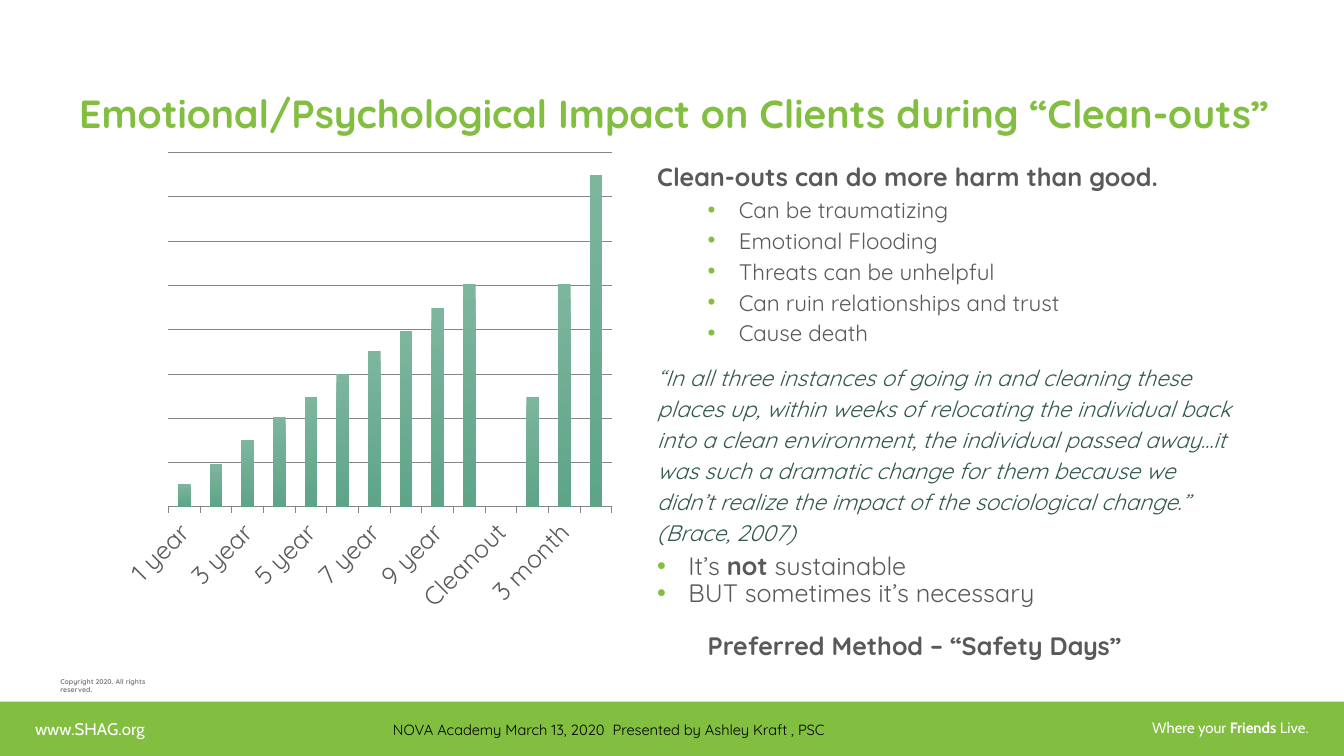
import pptx
import pptx.util
import pptx.chart.data
import pptx.dml.color
import pptx.enum.chart
import pptx.enum.shapes
import pptx.enum.text
import pptx.oxml
from pptx.oxml.ns import qn
from lxml import etree

Inches, Pt = pptx.util.Inches, pptx.util.Pt
ALIGN = pptx.enum.text.PP_ALIGN

COLORS = {"green": "82BE40", "text": "595959", "quote": "325949", "grid": "858585",
          "bar_top": "7DB59D", "bar_bottom": "5EA588", "copyright": "7F7F7F",
          "white": "FFFFFF", "black": "000000"}
FONT, FOOTER_FONT = "Quicksand", "Cabin"

TITLE = "Emotional/Psychological Impact on Clients during “Clean-outs”"
HEADING = "Clean-outs can do more harm than good."
HARMS = ["Can be traumatizing", "Emotional Flooding", "Threats can be unhelpful",
         "Can ruin relationships and trust", "Cause death"]
QUOTE = ("“In all three instances of going in and cleaning these places up, within weeks of "
         "relocating the individual back into a clean environment, the individual passed away…it "
         "was such a dramatic change for them because we didn’t realize the impact of the "
         "sociological change.” (Brace, 2007)")
VERDICT = [("It’s ", {}), ("not", {"bold": True}), (" sustainable", {})]
NECESSARY = "BUT sometimes it’s necessary"
PREFERRED = "Preferred Method – “Safety Days”"

YEARS = [f"{n} year" for n in range(1, 11)]
CATEGORIES = YEARS + ["Cleanout", "1 month", "3 month", "6 month"]
VALUES = [7, 13, 20, 27, 33, 40, 47, 53, 60, 67, 0, 33, 67, 100]
GRID_STEP, GRID_COUNT = 13.33, 8
PLOT_LAYOUT = {"x": 0.1, "y": 0.02, "w": 0.88, "h": 0.74}

WIDE, TIGHT = 1.15, 0.92
BODY = [
    {"runs": [(HEADING, {"bold": True})], "spacing": TIGHT},
    *[{"runs": [(harm, {"size": 16})], "indent": 0.81, "bullet": True} for harm in HARMS],
    {"runs": [(QUOTE, {"size": 16, "italic": True, "color": "quote"})], "before": 10},
    {"runs": VERDICT, "indent": 0.31, "bullet": True},
    {"runs": [(NECESSARY, {})], "indent": 0.31, "bullet": True, "spacing": TIGHT},
    {"runs": [(PREFERRED, {"bold": True})], "indent": 0.5, "before": 18, "spacing": TIGHT},
]

FOOTER = {"size": 12, "font": FOOTER_FONT, "color": "white"}
TAGLINE = {**FOOTER, "size": 10.7}
SMALL_TEXTS = [
    ((0.25, 7.08, 2.44, 0.3), ALIGN.LEFT, [("www.SHAG.org", FOOTER)]),
    ((11.33, 7.08, 1.9, 0.28), ALIGN.LEFT,
     [("Where your ", TAGLINE), ("Friends", {**TAGLINE, "bold": True}), (" Live.", TAGLINE)]),
    ((0.5, 6.67, 1.1, 0.25), ALIGN.LEFT,
     [("Copyright 2020. All rights reserved.", {"size": 5, "bold": True, "color": "copyright"})]),
    ((3.08, 7.1, 5.92, 0.4), ALIGN.CENTER,
     [("NOVA Academy March 13, 2020  Presented by Ashley Kraft , PSC",
       {"size": 10.5, "color": "black"})]),
]


def rgb(name):
    return pptx.dml.color.RGBColor.from_string(COLORS[name])


def box(left, top, width, height):
    return [Inches(v) for v in (left, top, width, height)]


def set_font(font, size=18, font_name=FONT, color="text", bold=False, italic=False):
    font.size, font.name, font.bold, font.italic = Pt(size), font_name, bold, italic
    font.color.rgb = rgb(color)


def add_runs(p, runs):
    for text, style in runs:
        r = p.add_run()
        r.text = text
        style = dict(style)
        set_font(r.font, font_name=style.pop("font", FONT), **style)


def set_indent(p, indent, bullet):
    pPr = p._p.get_or_add_pPr()
    pPr.set("marL", str(Inches(indent)))
    pPr.set("indent", str(Inches(-0.31) if bullet else 0))
    if bullet:
        color = etree.SubElement(pPr, qn("a:buClr"))
        etree.SubElement(color, qn("a:srgbClr"), val=COLORS["green"])
        etree.SubElement(pPr, qn("a:buFont"), typeface="Arial")
        etree.SubElement(pPr, qn("a:buChar"), char="•")


def add_text(s, place, align, paragraphs):
    tf = s.shapes.add_textbox(*box(*place)).text_frame
    tf.word_wrap = True
    for i, item in enumerate(paragraphs):
        p = tf.paragraphs[0] if i == 0 else tf.add_paragraph()
        p.alignment = align
        p.line_spacing = item.get("spacing", WIDE)
        p.space_before = Pt(item.get("before", 0))
        set_indent(p, item.get("indent", 0), item.get("bullet", False))
        add_runs(p, item["runs"])


def add_title(s):
    title = s.shapes.title
    title.left, title.top, title.width, title.height = box(0.02, 0.84, 13.33, 0.82)
    tf = title.text_frame
    tf.word_wrap = True
    tf.vertical_anchor = pptx.enum.text.MSO_ANCHOR.TOP
    p = tf.paragraphs[0]
    p.alignment = ALIGN.CENTER
    add_runs(p, [(TITLE, {"size": 28, "bold": True, "color": "green"})])


def add_impact_chart(s):
    data = pptx.chart.data.CategoryChartData()
    data.categories = CATEGORIES
    data.add_series("Series 1", VALUES)
    kind = pptx.enum.chart.XL_CHART_TYPE.COLUMN_STACKED
    chart = s.shapes.add_chart(kind, *box(1.17, 1.42, 5, 4.75), data).chart
    chart.has_legend = chart.has_title = False
    set_font(chart.font)

    plot = chart.plots[0]
    plot.gap_width, plot.overlap, plot.vary_by_categories = 150, 100, False
    fill = plot.series[0].format.fill
    fill.gradient()
    fill.gradient_angle = 270
    for stop, name, position in zip(fill.gradient_stops, ("bar_top", "bar_bottom"), (0, 1)):
        stop.color.rgb, stop.position = rgb(name), position

    values, cats = chart.value_axis, chart.category_axis
    values.minimum_scale, values.maximum_scale = 0, GRID_STEP * GRID_COUNT
    values.major_unit = GRID_STEP
    values.has_major_gridlines = True
    values.visible = False
    for line in (values.major_gridlines.format.line, cats.format.line):
        line.color.rgb, line.width = rgb("grid"), Pt(0.75)
    cats.major_tick_mark = pptx.enum.chart.XL_TICK_MARK.OUTSIDE
    set_font(cats.tick_labels.font)
    cats._element.find(qn("c:txPr")).find(qn("a:bodyPr")).set("rot", "-2700000")
    skip = etree.Element(qn("c:tickLblSkip"), val="2")
    cats._element.find(qn("c:noMultiLvlLbl")).addprevious(skip)

    area = chart._chartSpace.chart.plotArea
    for old in area.findall(qn("c:layout")):
        area.remove(old)
    layout = etree.Element(qn("c:layout"))
    area.insert(0, layout)
    manual = etree.SubElement(layout, qn("c:manualLayout"))
    settings = {"layoutTarget": "inner", "xMode": "edge", "yMode": "edge", **PLOT_LAYOUT}
    for tag, value in settings.items():
        etree.SubElement(manual, qn(f"c:{tag}"), val=str(value))


def main():
    prs = pptx.Presentation()
    prs.slide_width, prs.slide_height = Inches(13.33), Inches(7.5)
    s = prs.slides.add_slide(prs.slide_layouts[5])
    band = s.shapes.add_shape(pptx.enum.shapes.MSO_SHAPE.RECTANGLE, *box(0, 6.96, 13.33, 0.54))
    band.shadow.inherit = False
    band.fill.solid()
    band.fill.fore_color.rgb = rgb("green")
    band.line.fill.background()
    add_title(s)
    add_impact_chart(s)
    add_text(s, (6.42, 1.58, 5.92, 5.16), ALIGN.LEFT, BODY)
    for place, align, runs in SMALL_TEXTS:
        add_text(s, place, align, [{"runs": runs, "spacing": 1.0}])
    prs.save("out.pptx")


if __name__ == "__main__":
    main()
